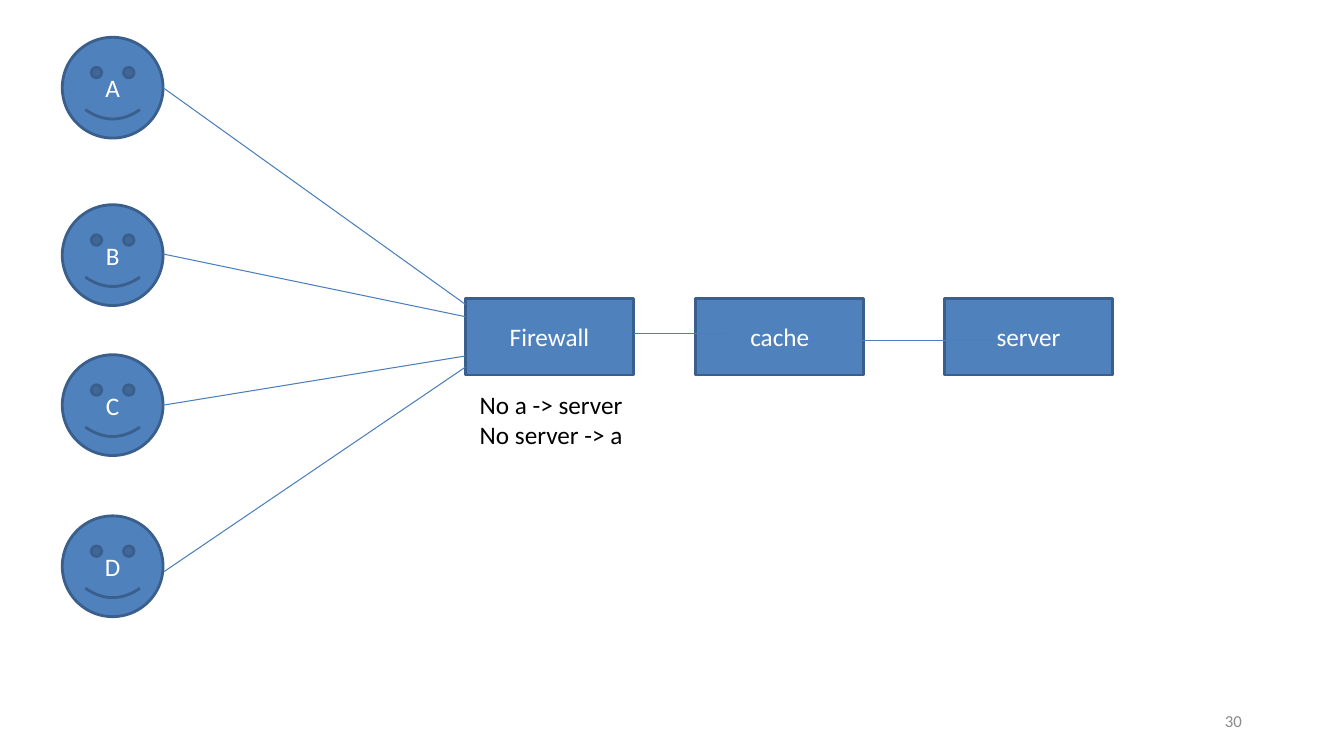
"""Build a slide of four users reaching a server through a firewall and a cache."""
from lxml.etree import SubElement
from pptx import Presentation
from pptx.dml.color import RGBColor
from pptx.enum.shapes import MSO_CONNECTOR, MSO_SHAPE
from pptx.enum.text import MSO_ANCHOR, PP_ALIGN
from pptx.oxml.ns import qn
from pptx.util import Cm, Pt


def paint(color_format, hex_color):
    color_format.rgb = RGBColor.from_string(hex_color)


def write(shape, text, size, color, align, anchor, wrap=True):
    frame = shape.text_frame
    frame.text = text
    frame_format = {
        "word_wrap": wrap, "vertical_anchor": anchor,
        "margin_left": Cm(0.25), "margin_right": Cm(0.25),
        "margin_top": Cm(0.13), "margin_bottom": Cm(0.13),
    }
    for name, value in frame_format.items():
        setattr(frame, name, value)
    for paragraph in frame.paragraphs:
        paragraph.alignment = align
        for name, value in {"name": "Calibri", "size": Pt(size)}.items():
            setattr(paragraph.font, name, value)
        paint(paragraph.font.color, color)


deck = Presentation()
deck.slide_width, deck.slide_height = Cm(33.87), Cm(19.05)
slide = deck.slides.add_slide(deck.slide_layouts[6])
shapes = slide.shapes

page_number = shapes.add_textbox(Cm(23.93), Cm(17.65), Cm(7.62), Cm(1.02))
write(page_number, "30", 12, "8B8B8B", PP_ALIGN.RIGHT, MSO_ANCHOR.MIDDLE)

user_tops = {"A": 0.94, "B": 5.16, "C": 8.94, "D": 13}
host_lefts = {"Firewall": 11.73, "cache": 17.53, "server": 23.8}
users = [(user, MSO_SHAPE.SMILEY_FACE, 1.57, top, 2.54, 2.54)
         for user, top in user_tops.items()]
hosts = [(host, MSO_SHAPE.RECTANGLE, left, 7.52, 4.24, 1.93)
         for host, left in host_lefts.items()]
user_links = [(4.11, 2.21, 11.73, 7.67), (4.11, 6.4, 11.73, 7.98),
              (4.11, 10.21, 11.73, 8.97), (4.14, 14.4, 11.73, 9.25)]
host_links = [(15.98, 8.41, 18.31, 8.41), (21.46, 8.59, 25.12, 8.59)]

for label, outline, *place in users + hosts:
    node = shapes.add_shape(outline, *map(Cm, place))
    node.shadow.inherit = False
    node.fill.solid()
    paint(node.fill.fore_color, "4F81BD")
    paint(node.line.color, "3A5F8C")
    node.line.width = Pt(2)
    write(node, label, 18, "FFFFFF", PP_ALIGN.CENTER, MSO_ANCHOR.MIDDLE)

for ends in user_links + host_links:
    link = shapes.add_connector(MSO_CONNECTOR.STRAIGHT, *map(Cm, ends))
    paint(link.line.color, "4B7EBC")
    link.line.width = Pt(0.75)
    SubElement(link._element.spPr, qn("a:effectLst"))

rules = shapes.add_textbox(Cm(11.84), Cm(9.68), Cm(4.11), Cm(1.78))
write(rules, "No a -> server\nNo server -> a", 18, "000000",
      PP_ALIGN.LEFT, MSO_ANCHOR.TOP, wrap=False)

deck.save("out.pptx")
